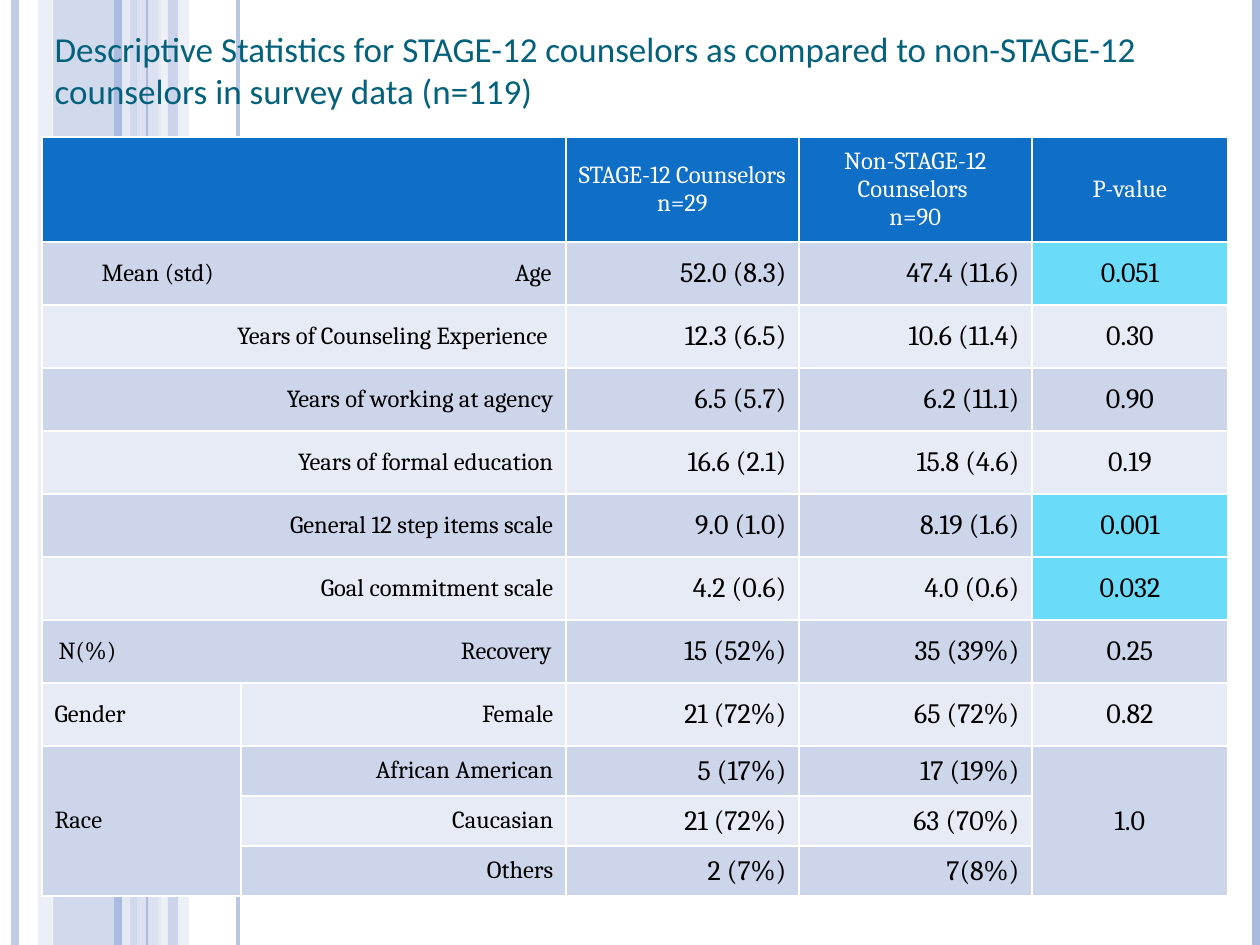
from lxml.etree import SubElement
from pptx import Presentation
from pptx.dml.color import RGBColor
from pptx.enum.shapes import MSO_CONNECTOR as Connector, MSO_SHAPE as Shape
from pptx.enum.text import MSO_ANCHOR as Anchor, MSO_AUTO_SIZE as AutoSize, PP_ALIGN as Align
from pptx.oxml.ns import qn
from pptx.util import Emu, Pt

WIDTH, HEIGHT = 1260, 945
BLUE, BAND, PALE, WHITE, BLACK = "0F6FC6", "CCD5EA", "E7EBF5", "FFFFFF", "000000"
STRIPE, HIGHLIGHT, TITLE = "ABBBDF", "6BDBFA", "04617B"

BARS = [(53, 84, STRIPE, 54), (38, 14, BAND, 36), (136, 25, BAND, 70), (158, 31, PALE, 71)]
RULES = [(15, 4.5, STRIPE, 73), (126, 4.5, PALE, 83), (118, 4.5, STRIPE, 100),
         (238, 2.25, STRIPE, 82), (147, 0.75, STRIPE, 100), (1256, 4.5, STRIPE, 100)]
NARROW_BAR = (168, 10, STRIPE, 51)

COLUMNS = [199, 325, 233, 233, 196]
HEIGHTS = [105] + [63] * 8 + [50] * 3
HEADER = ["", "", "STAGE-12 Counselors \nn=29", "Non-STAGE-12 Counselors \nn=90", "P-value"]
ROWS = [
    ["\tMean (std)\tAge", "", "52.0 (8.3)", "47.4 (11.6)", "0.051"],
    ["Years of Counseling Experience ", "", "12.3 (6.5)", "10.6 (11.4)", "0.30"],
    ["Years of working at agency", "", "6.5 (5.7)", "6.2 (11.1)", "0.90"],
    ["Years of formal education", "", "16.6 (2.1)", "15.8 (4.6)", "0.19"],
    ["General 12 step items scale", "", "9.0 (1.0)", "8.19 (1.6)", "0.001"],
    ["Goal commitment scale", "", "4.2 (0.6)", "4.0 (0.6)", "0.032"],
    ["\tN(%)\tRecovery", "", "15 (52%)", "35 (39%)", "0.25"],
    ["Gender", "Female", "21 (72%)", "65 (72%)", "0.82"],
    ["Race", "African American", "5 (17%)", "17 (19%)", "1.0"],
    ["", "Caucasian", "21 (72%)", "63 (70%)", ""],
    ["", "Others", "2 (7%)", "7(8%)", ""],
]
MERGES = [((row, 0), (row, 1)) for row in range(8)] + [((9, 0), (11, 0)), ((9, 4), (11, 4))]
SIGNIFICANT = {1, 5, 6}
TAB_STOPS = {1: [(47, "l"), (497, "r")], 7: [(4, "l"), (497, "r")]}


def px(length):
    """Turn pixels into EMU."""
    return Emu(round(length * 914400 / 126))


def rgb(value):
    """Turn a hex string into a colour."""
    return RGBColor.from_string(value)


def set_opacity(element, percent):
    """Make the solid colour inside an element partly transparent."""
    if percent < 100:
        color = element.find(".//" + qn("a:srgbClr"))
        SubElement(color, qn("a:alpha"), val=str(percent * 1000))


class Painter:
    """Holds the style and the current page."""

    def __init__(self, page, title_font="Calibri", table_font="Cambria"):
        """Keep the page and its fonts."""
        self.page = page
        self.title_font = title_font
        self.table_font = table_font

    def bar(self, left, width, color, opacity):
        """Draw a stripe over the full page height."""
        box = self.page.shapes.add_shape(Shape.RECTANGLE, px(left), 0, px(width), px(HEIGHT))
        box.shadow.inherit = False
        box.fill.solid()
        box.fill.fore_color.rgb = rgb(color)
        box.line.fill.background()
        set_opacity(box._element.spPr, opacity)

    def rule(self, x, weight, color, opacity):
        """Draw a vertical line over the full page height."""
        line = self.page.shapes.add_connector(Connector.STRAIGHT, px(x), 0, px(x), px(HEIGHT))
        line.line.width = Pt(weight)
        line.line.color.rgb = rgb(color)
        set_opacity(line._element.spPr, opacity)
        SubElement(line._element.spPr, qn("a:effectLst"))

    def style(self, para, font, size, color, align):
        """Set the font and alignment of a paragraph."""
        para.alignment = align
        para.font.name = font
        para.font.size = Pt(size)
        para.font.bold = False
        para.font.color.rgb = rgb(color)

    def title(self, text, left, top, width, height):
        """Fill the title placeholder and bring it to the front."""
        box = self.page.shapes.title
        box.left, box.top, box.width, box.height = map(px, (left, top, width, height))
        frame = box.text_frame
        frame.text = text
        frame.word_wrap = True
        frame.auto_size = AutoSize.SHAPE_TO_FIT_TEXT
        frame.vertical_anchor = Anchor.MIDDLE
        self.style(frame.paragraphs[0], self.title_font, 20, TITLE, Align.LEFT)
        self.page.shapes._spTree.append(box._element)

    def tabs(self, para, stops):
        """Give a paragraph its tab stops."""
        properties = para._p.get_or_add_pPr()
        tab_list = SubElement(properties, qn("a:tabLst"))
        for position, align in stops:
            SubElement(tab_list, qn("a:tab"), pos=str(px(position)), algn=align)

    def cell(self, cell, text, fill, size, color, align, stops=()):
        """Write and colour one table cell."""
        cell.text = text
        cell.vertical_anchor = Anchor.MIDDLE
        cell.fill.solid()
        cell.fill.fore_color.rgb = rgb(fill)
        for para in cell.text_frame.paragraphs:
            if stops:
                self.tabs(para, stops)
            self.style(para, self.table_font, size, color, align)

    def table(self, left, top):
        """Draw the statistics table."""
        frame = self.page.shapes.add_table(len(HEIGHTS), len(COLUMNS), px(left), px(top),
                                           px(sum(COLUMNS)), px(sum(HEIGHTS)))
        table = frame.table
        for column, width in zip(table.columns, COLUMNS):
            column.width = px(width)
        for row, height in zip(table.rows, HEIGHTS):
            row.height = px(height)
        for column, text in enumerate(HEADER):
            self.cell(table.cell(0, column), text, BLUE, 14, WHITE, Align.CENTER)
        for row, texts in enumerate(ROWS, 1):
            band = BAND if row % 2 else PALE
            for column, text in enumerate(texts):
                stops = TAB_STOPS.get(row, ()) if column == 0 else ()
                align = Align.CENTER if column == 4 else Align.RIGHT
                if stops or (column == 0 and row >= 8):
                    align = Align.LEFT
                fill = HIGHLIGHT if column == 4 and row in SIGNIFICANT else band
                size = 14 if column < 2 else 16
                self.cell(table.cell(row, column), text, fill, size, BLACK, align, stops)
        for first, last in MERGES:
            table.cell(*first).merge(table.cell(*last))


def main():
    """Build the deck and save it."""
    deck = Presentation()
    deck.slide_width, deck.slide_height = px(WIDTH), px(HEIGHT)
    painter = Painter(deck.slides.add_slide(deck.slide_layouts[5]))
    for bar in BARS:
        painter.bar(*bar)
    for rule in RULES:
        painter.rule(*rule)
    painter.bar(*NARROW_BAR)
    painter.table(42, 137)
    painter.title("Descriptive Statistics for STAGE-12 counselors as compared to non-STAGE-12 "
                  "counselors in survey data (n=119)", 42, 21, 1134, 97)
    deck.save("out.pptx")


if __name__ == "__main__":
    main()
